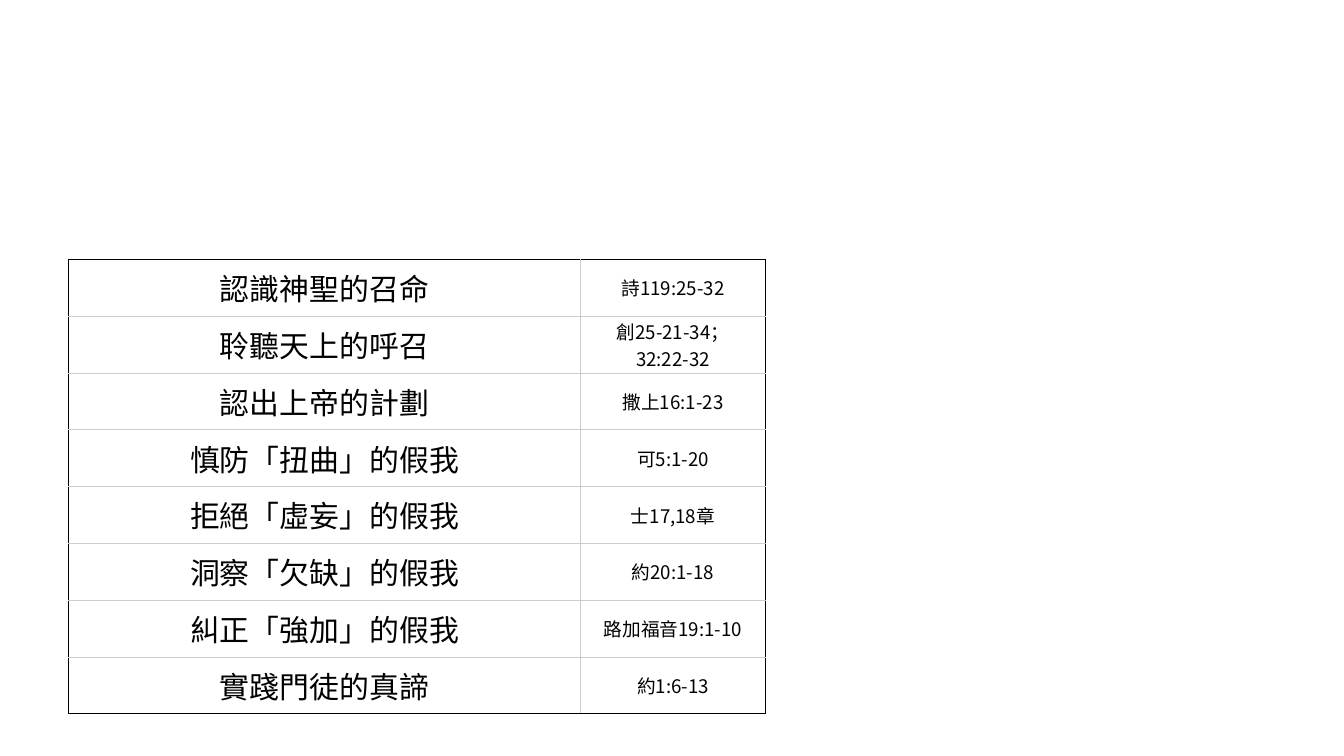
from lxml import etree
from pptx import Presentation
from pptx.dml.color import RGBColor
from pptx.enum.text import MSO_ANCHOR, PP_ALIGN
from pptx.oxml.ns import qn
from pptx.util import Inches, Pt

MIDDLE = MSO_ANCHOR.MIDDLE
CENTER = PP_ALIGN.CENTER
FONT = "Noto Sans CJK SC"
COLORS = {"text": "000000", "fill": "FFFFFF", "frame": "000000", "grid": "CCCCCC"}

# Topic and Bible passage; a line break splits a passage in two
LESSONS = [
    ("認識神聖的召命", "詩119:25-32"),
    ("聆聽天上的呼召", "創25-21-34；\n32:22-32"),
    ("認出上帝的計劃", "撒上16:1-23"),
    ("慎防「扭曲」的假我", "可5:1-20"),
    ("拒絕「虛妄」的假我", "士17,18章"),
    ("洞察「欠缺」的假我", "約20:1-18"),
    ("糾正「強加」的假我", "路加福音19:1-10"),
    ("實踐門徒的真諦", "約1:6-13"),
]
WIDTHS = (7.62, 2.75)
SIZES = (32, 20)
LEFT, TOP, ROW_H = 1.02, 3.86, 0.845


def rgb(name):
    return RGBColor.from_string(COLORS[name])


def add_edge(cell, side, name):
    line = etree.SubElement(cell._tc.get_or_add_tcPr(), qn(f"a:ln{side}"), w=str(Pt(0.75)))
    fill = etree.SubElement(line, qn("a:solidFill"))
    etree.SubElement(fill, qn("a:srgbClr"), val=COLORS[name])


def add_text(cell, text, size):
    para = cell.text_frame.paragraphs[0]
    para.alignment = CENTER
    for i, part in enumerate(text.split("\n")):
        if i:
            para.add_line_break()
        run = para.add_run()
        run.text = part
        font = run.font
        font.size = Pt(size)
        font.color.rgb = rgb("text")
        font.name = FONT
        etree.SubElement(run._r.get_or_add_rPr(), qn("a:ea"), typeface=FONT)


def style_cell(cell, outer):
    # Edges come before the fill in the cell's properties
    for side, is_outer in outer.items():
        add_edge(cell, side, "frame" if is_outer else "grid")
    cell.fill.solid()
    cell.fill.fore_color.rgb = rgb("fill")
    cell.vertical_anchor = MIDDLE
    cell.margin_left = cell.margin_right = Inches(0.03)
    cell.margin_top = cell.margin_bottom = Inches(0.02)


def main():
    prs = Presentation()
    prs.slide_width, prs.slide_height = Inches(20), Inches(11.25)
    slide = prs.slides.add_slide(prs.slide_layouts[6])

    # Lesson table
    rows, cols = len(LESSONS), len(WIDTHS)
    frame = slide.shapes.add_table(rows, cols, Inches(LEFT), Inches(TOP),
                                   Inches(sum(WIDTHS)), Inches(rows * ROW_H))
    table = frame.table
    table.first_row = table.horz_banding = False
    for col, width in zip(table.columns, WIDTHS):
        col.width = Inches(width)

    for r, lesson in enumerate(LESSONS):
        table.rows[r].height = Inches(ROW_H)
        for c, text in enumerate(lesson):
            cell = table.cell(r, c)
            style_cell(cell, {"L": c == 0, "R": c == cols - 1,
                              "T": r == 0, "B": r == rows - 1})
            add_text(cell, text, SIZES[c])

    prs.save("out.pptx")


if __name__ == "__main__":
    main()
